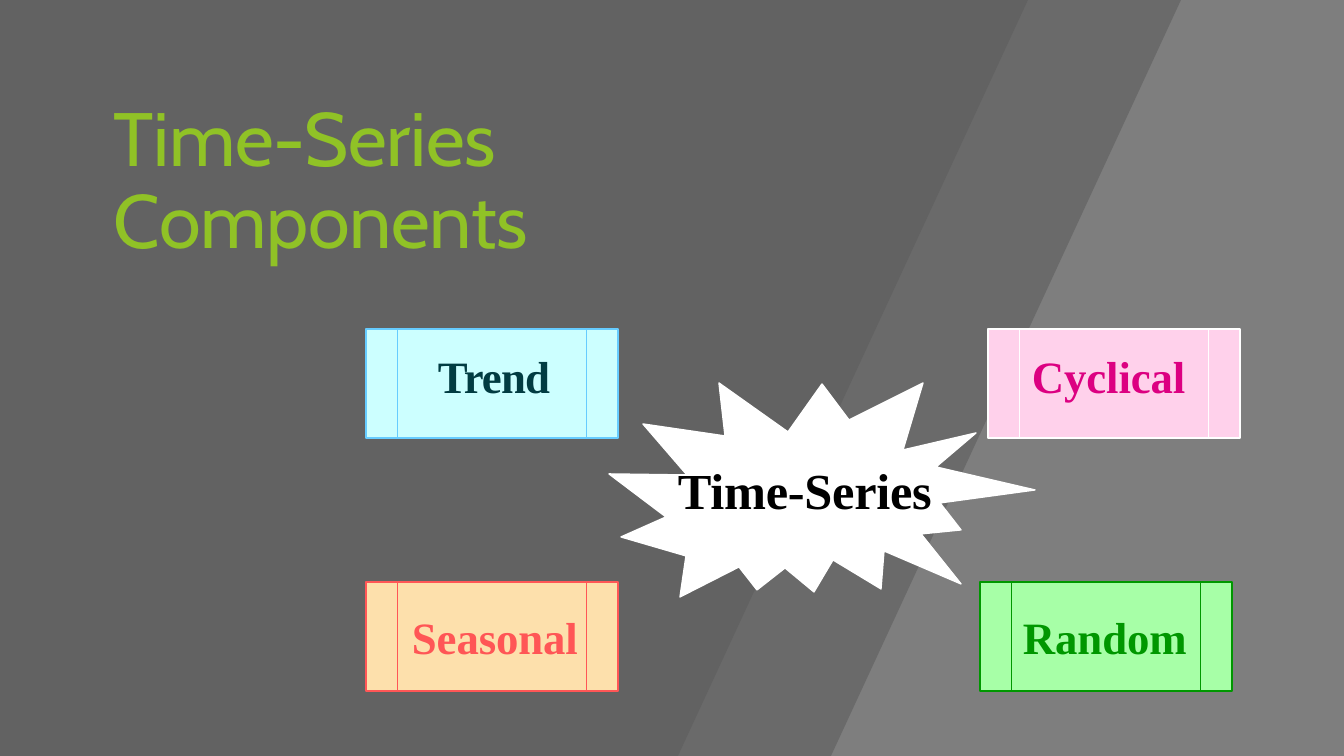
from dataclasses import dataclass

from lxml import etree
from pptx import Presentation
from pptx import util as u
from pptx.dml.color import RGBColor
from pptx.enum import shapes
from pptx.oxml import ns
from pptx.shapes.autoshape import Shape
from pptx.slide import Slide

SLIDE_W, SLIDE_H = 1344, 756
EMU_PER_PX = 12192000 / SLIDE_W
BOX_W, BOX_H = 252, 109
LABEL_H = 56
SERIF = "Times New Roman"

COLOURS = {
    "backdrop": "7E7E7E",
    "band": "626262",
    "title": "90C226",
    "burst": "FFFFFF",
    "burst_text": "000000",
    "trend_fill": "CCFFFF",
    "trend_line": "66CCFF",
    "trend_text": "013C42",
    "cyclical_fill": "FFD1EB",
    "cyclical_line": "FFFFFF",
    "cyclical_text": "DC0081",
    "seasonal_fill": "FDE0AC",
    "seasonal_line": "FF5656",
    "seasonal_text": "FF5656",
    "random_fill": "A7FFA7",
    "random_line": "009700",
    "random_text": "009700",
}


@dataclass(frozen=True)
class Band:
    points: list[tuple[int, int]]
    opacity: int


@dataclass(frozen=True)
class Label:
    wording: str
    left: int
    top: int
    width: int
    height: int
    size: int
    font: str
    colour: str
    bold: bool = True
    tracking: int = -10
    inset_top: int = 1
    space_before: float = 1
    line_spacing: float | None = None


@dataclass(frozen=True)
class Component:
    key: str
    left: int
    top: int
    label_left: int
    label_top: int
    label_width: int
    tracking: int = -10


BANDS = [
    Band([(137, 0), (1181, 0), (831, SLIDE_H), (137, SLIDE_H)], 70),
    Band([(0, 0), (1028, 0), (678, SLIDE_H), (0, SLIDE_H)], 100),
]

BURST = [
    (849, 420), (822, 384), (788, 432), (719, 383), (725, 436), (643, 424), (687, 475),
    (609, 474), (666, 517), (621, 537), (686, 556), (680, 597), (739, 567), (757, 590),
    (785, 568), (814, 592), (833, 560), (881, 589), (884, 551), (961, 584), (921, 534),
    (961, 530), (940, 503), (1035, 490), (936, 467), (976, 433), (903, 450), (923, 383),
]

COMPONENTS = [
    Component("cyclical", 988, 329, 1031, 348, 157),
    Component("random", 980, 582, 1022, 609, 167),
    Component("trend", 366, 329, 437, 348, 118, tracking=-60),
    Component("seasonal", 366, 582, 411, 609, 170),
]

TITLE = Label("Time-Series Components", 113, 88, 468, 175, 54, "Cabin", "title",
              bold=False, tracking=-20, inset_top=12, space_before=8.3, line_spacing=58.4)
BURST_LABEL = Label("Time-Series", 677, 458, 259, 64, 36, SERIF, "burst_text", tracking=-20)


def px(length: int) -> u.Emu:
    return u.Emu(round(length * EMU_PER_PX))


def rgb(name: str) -> RGBColor:
    return RGBColor.from_string(COLOURS[name])


def paint(shape: Shape, fill: str, line: str | None = None) -> None:
    shape.shadow.inherit = False
    shape.fill.solid()
    shape.fill.fore_color.rgb = rgb(fill)
    if line is None:
        shape.line.fill.background()
    else:
        shape.line.color.rgb = rgb(line)
        shape.line.width = u.Pt(1)


def draw_outline(slide: Slide, points: list[tuple[int, int]]) -> Shape:
    builder = slide.shapes.build_freeform(*points[0], scale=EMU_PER_PX)
    builder.add_line_segments(points[1:], close=True)
    return builder.convert_to_shape()


def draw_band(slide: Slide, band: Band) -> None:
    stripe = draw_outline(slide, band.points)
    paint(stripe, "band")
    if band.opacity < 100:
        colour = stripe.fill._xPr.find(".//" + ns.qn("a:srgbClr"))
        etree.SubElement(colour, ns.qn("a:alpha"), val=str(band.opacity * 1000))


def draw_label(slide: Slide, label: Label) -> None:
    box = slide.shapes.add_textbox(*map(px, (label.left, label.top, label.width, label.height)))
    frame = box.text_frame
    frame.word_wrap = True
    frame.margin_left = px(1)
    frame.margin_top = px(label.inset_top)
    frame.margin_right = frame.margin_bottom = 0
    frame.text = label.wording
    paragraph = frame.paragraphs[0]
    paragraph.space_before = u.Pt(label.space_before)
    if label.line_spacing:
        paragraph.line_spacing = u.Pt(label.line_spacing)
    font = paragraph.runs[0].font
    font.name = label.font
    font.size = u.Pt(label.size)
    font.bold = label.bold
    font.color.rgb = rgb(label.colour)
    font._element.set("spc", str(label.tracking))


def draw_component(slide: Slide, part: Component) -> None:
    box = slide.shapes.add_shape(
        shapes.MSO_SHAPE.FLOWCHART_PREDEFINED_PROCESS,
        *map(px, (part.left, part.top, BOX_W, BOX_H)),
    )
    paint(box, f"{part.key}_fill", f"{part.key}_line")
    draw_label(slide, Label(part.key.title(), part.label_left, part.label_top, part.label_width,
                            LABEL_H, 32, SERIF, f"{part.key}_text", tracking=part.tracking))


def main() -> None:
    deck = Presentation()
    deck.slide_width, deck.slide_height = px(SLIDE_W), px(SLIDE_H)
    slide = deck.slides.add_slide(deck.slide_layouts[6])
    slide.background.fill.solid()
    slide.background.fill.fore_color.rgb = rgb("backdrop")
    for band in BANDS:
        draw_band(slide, band)
    draw_label(slide, TITLE)
    paint(draw_outline(slide, BURST), "burst", "burst")
    draw_label(slide, BURST_LABEL)
    for part in COMPONENTS:
        draw_component(slide, part)
    deck.save("out.pptx")


if __name__ == "__main__":
    main()
